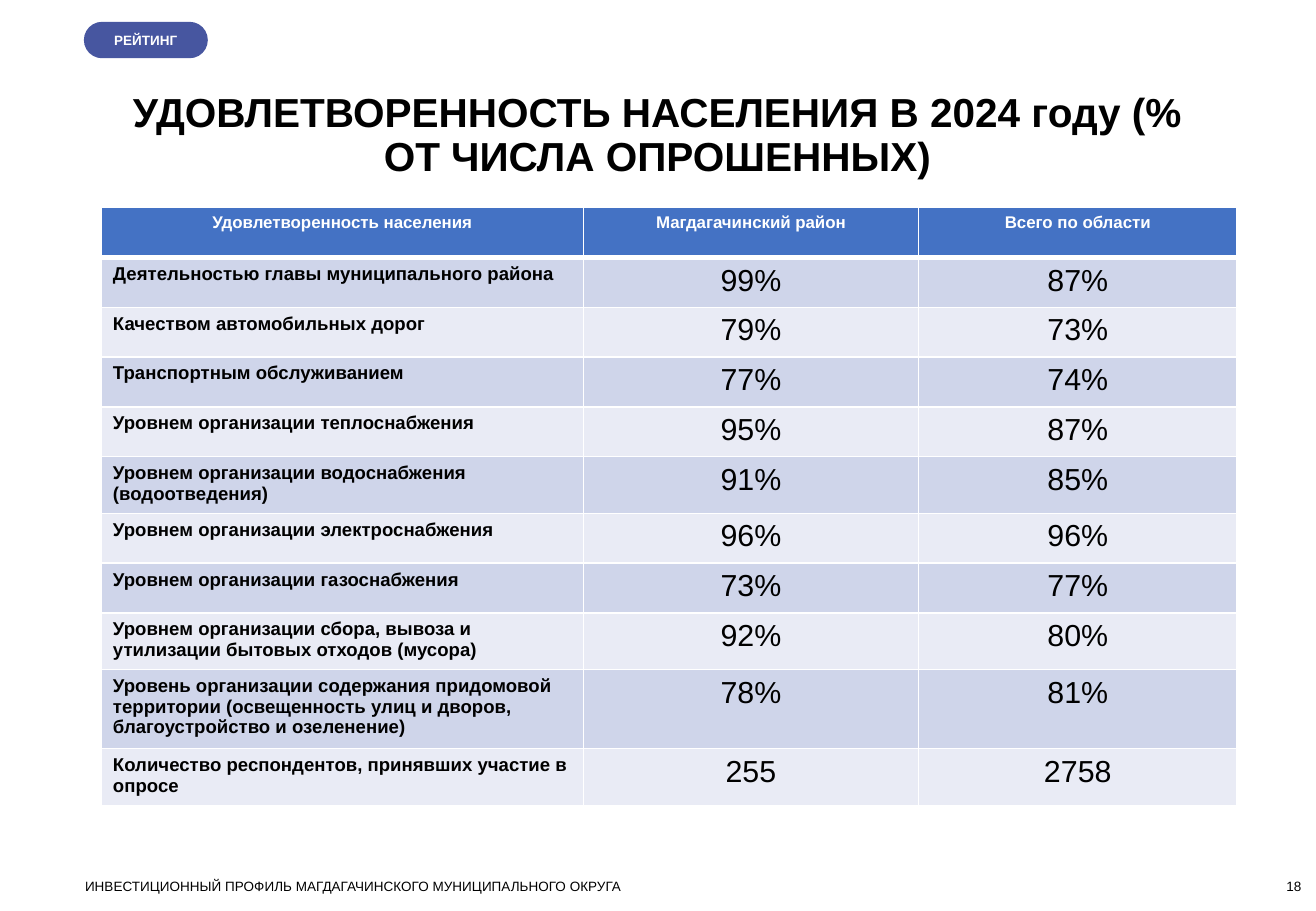
"""Build the slide on residents' satisfaction in 2024."""
from dataclasses import dataclass

from lxml.etree import SubElement
from pptx import Presentation
from pptx.dml.color import RGBColor
from pptx.enum.shapes import MSO_SHAPE as Shape
from pptx.enum.text import MSO_ANCHOR as Anchor, MSO_AUTO_SIZE as AutoSize, PP_ALIGN as Align
from pptx.oxml.ns import qn
from pptx.slide import Slide
from pptx.table import _Cell as Cell
from pptx.text.text import TextFrame
from pptx.util import Inches, Pt


@dataclass(frozen=True)
class Theme:
    font: str = "Arial"
    black: str = "000000"
    white: str = "FFFFFF"
    pill: str = "4756A0"
    header: str = "4472C4"
    bands: tuple[str, str] = ("CFD5EA", "E9EBF5")
    title_size: int = 24
    header_size: int = 10
    label_size: int = 11
    value_size: int = 18
    small_size: int = 8


@dataclass(frozen=True)
class Box:
    left: float
    top: float
    width: float
    height: float

    def emu(self) -> tuple[int, int, int, int]:
        return tuple(Inches(v) for v in (self.left, self.top, self.width, self.height))


@dataclass(frozen=True)
class TextStyle:
    size: int
    color: str
    bold: bool = False
    align: Align = Align.LEFT


@dataclass(frozen=True)
class Note:
    text: str
    box: Box
    align: Align
    anchor: Anchor


@dataclass(frozen=True)
class Rating:
    label: str
    district: str
    region: str


THEME = Theme()
TITLE = "УДОВЛЕТВОРЕННОСТЬ НАСЕЛЕНИЯ В 2024 году (% ОТ ЧИСЛА ОПРОШЕННЫХ)"
TITLE_BOX = Box(0.74, 0.4, 9.34, 1.45)
PILL_BOX = Box(0.69, 0.18, 1.02, 0.3)
TABLE_BOX = Box(0.83, 1.71, 9.35, 4.51)
COLUMNS = (3.97, 2.76, 2.62)
ROW_HEIGHT = 0.41
HEADER = Rating("Удовлетворенность населения", "Магдагачинский район", "Всего по области")
RATINGS = (
    Rating("Деятельностью главы муниципального района", "99%", "87%"),
    Rating("Качеством автомобильных дорог", "79%", "73%"),
    Rating("Транспортным обслуживанием", "77%", "74%"),
    Rating("Уровнем организации теплоснабжения", "95%", "87%"),
    Rating("Уровнем организации водоснабжения (водоотведения)", "91%", "85%"),
    Rating("Уровнем организации электроснабжения", "96%", "96%"),
    Rating("Уровнем организации газоснабжения", "73%", "77%"),
    Rating("Уровнем организации сбора, вывоза и утилизации бытовых отходов (мусора)", "92%", "80%"),
    Rating(
        "Уровень организации содержания придомовой территории "
        "(освещенность улиц и дворов, благоустройство и озеленение)", "78%", "81%",
    ),
    Rating("Количество респондентов, принявших участие в опросе", "255", "2758"),
)
NOTES = (
    Note("18", Box(9.91, 7.23, 0.8, 0.13), Align.RIGHT, Anchor.BOTTOM),
    Note("ИНВЕСТИЦИОННЫЙ ПРОФИЛЬ МАГДАГАЧИНСКОГО МУНИЦИПАЛЬНОГО ОКРУГА",
         Box(0.7, 7.23, 8, 0.13), Align.LEFT, Anchor.TOP),
)
FLUSH = dict(margin_left=0, margin_right=0, margin_top=0, margin_bottom=0, word_wrap=True)


def apply(target: object, **values: object) -> None:
    for name, value in values.items():
        setattr(target, name, value)


def write(tf: TextFrame, text: str, style: TextStyle) -> None:
    p = tf.paragraphs[0]
    p.alignment = style.align
    r = p.add_run()
    r.text = text
    apply(r.font, name=THEME.font, size=Pt(style.size), bold=style.bold)
    r.font.color.rgb = RGBColor.from_string(style.color)


def add_title(s: Slide) -> None:
    sp = s.shapes.title
    left, top, width, height = TITLE_BOX.emu()
    apply(sp, left=left, top=top, width=width, height=height)
    tf = sp.text_frame
    apply(tf, vertical_anchor=Anchor.MIDDLE, word_wrap=True, auto_size=AutoSize.NONE)
    write(tf, TITLE, TextStyle(THEME.title_size, THEME.black, True, Align.CENTER))
    tf.paragraphs[0].line_spacing = 0.9


def add_note(s: Slide, note: Note) -> None:
    tf = s.shapes.add_textbox(*note.box.emu()).text_frame
    apply(tf, vertical_anchor=note.anchor, **FLUSH)
    write(tf, note.text, TextStyle(THEME.small_size, THEME.black, align=note.align))


def add_pill(s: Slide) -> None:
    sp = s.shapes.add_shape(Shape.ROUNDED_RECTANGLE, *PILL_BOX.emu())
    sp.adjustments[0] = 0.5
    sp.shadow.inherit = False
    sp.fill.solid()
    sp.fill.fore_color.rgb = RGBColor.from_string(THEME.pill)
    sp.line.fill.background()
    apply(sp.text_frame, vertical_anchor=Anchor.MIDDLE, **FLUSH)
    write(sp.text_frame, "РЕЙТИНГ", TextStyle(THEME.small_size, THEME.white, True, Align.CENTER))


def add_borders(cell: Cell, widths: dict[str, int]) -> None:
    tc_pr = cell._tc.get_or_add_tcPr()
    for side, width in widths.items():
        ln = SubElement(tc_pr, qn(f"a:ln{side}"), w=str(Pt(width)))
        SubElement(SubElement(ln, qn("a:solidFill")), qn("a:srgbClr"), val=THEME.white)


def cell_style(row: int, column: int) -> TextStyle:
    if row == 0:
        return TextStyle(THEME.header_size, THEME.white, True, Align.CENTER)
    if column == 0:
        return TextStyle(THEME.label_size, THEME.black, True)
    return TextStyle(THEME.value_size, THEME.black, align=Align.CENTER)


def add_ratings(s: Slide) -> None:
    rows = (HEADER, *RATINGS)
    table = s.shapes.add_table(len(rows), len(COLUMNS), *TABLE_BOX.emu()).table
    for column, width in zip(table.columns, COLUMNS):
        column.width = Inches(width)
    for i, rating in enumerate(rows):
        table.rows[i].height = Inches(ROW_HEIGHT)
        fill = THEME.bands[(i - 1) % 2] if i else THEME.header
        widths = {"L": 1, "R": 1, "T": 3 if i == 1 else 1, "B": 1 if i else 3}
        for j, text in enumerate((rating.label, rating.district, rating.region)):
            cell = table.cell(i, j)
            add_borders(cell, widths)
            cell.fill.solid()
            cell.fill.fore_color.rgb = RGBColor.from_string(fill)
            write(cell.text_frame, text, cell_style(i, j))


def main() -> None:
    prs = Presentation()
    apply(prs, slide_width=Inches(10.83), slide_height=Inches(7.5))
    s = prs.slides.add_slide(prs.slide_layouts[5])
    add_title(s)
    for note in NOTES:
        add_note(s, note)
    add_ratings(s)
    add_pill(s)
    prs.save("out.pptx")


if __name__ == "__main__":
    main()
